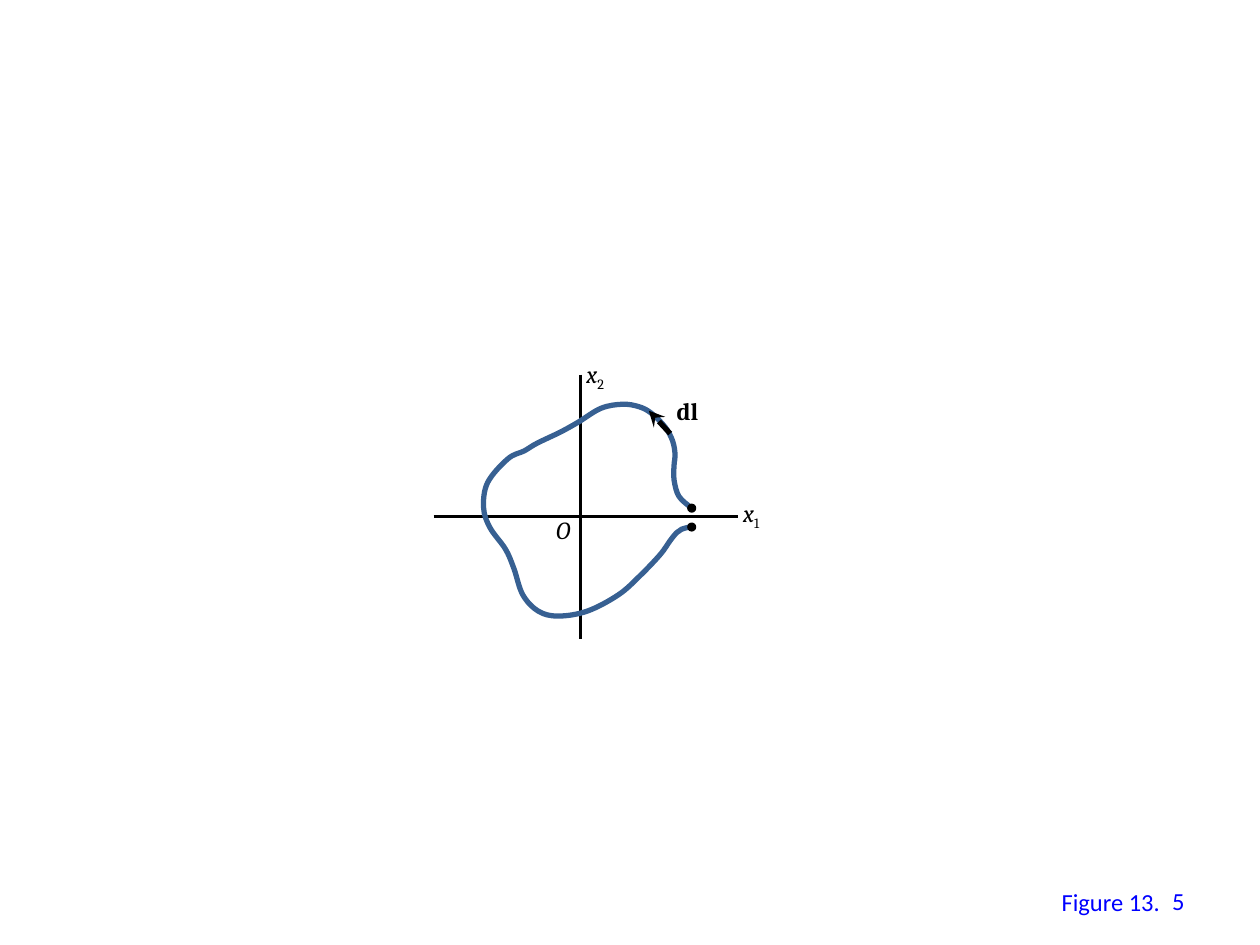
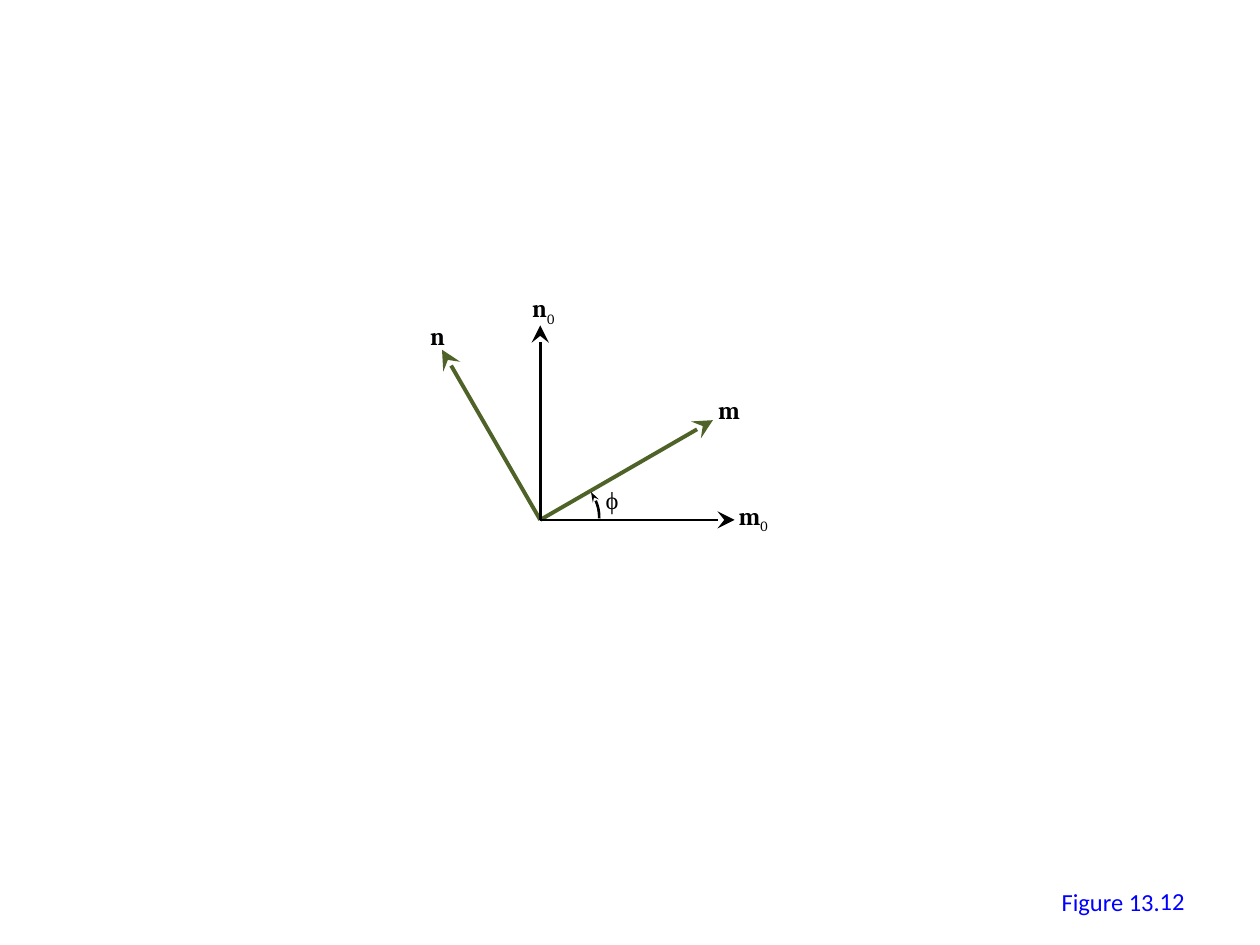
from math import cos, radians, sin

from lxml import etree
from pptx import Presentation
from pptx.dml.color import RGBColor
from pptx.enum.shapes import MSO_CONNECTOR, MSO_SHAPE
from pptx.enum.text import MSO_ANCHOR, MSO_AUTO_SIZE, PP_ALIGN
from pptx.oxml.ns import qn
from pptx.util import Cm, Pt

BLACK = RGBColor(0x00, 0x00, 0x00)
BLUE = RGBColor(0x00, 0x00, 0xFF)
STEEL = RGBColor(0x37, 0x60, 0x92)
GREEN = RGBColor(0x4F, 0x62, 0x28)


def add_label(s, left, top, width, runs, font="Cambria", color=BLACK):
    """Add a one-line text; each run is (text, style): b, i, sub or empty."""
    sp = s.shapes.add_textbox(Cm(left), Cm(top), Cm(width), Cm(0.86))
    tf = sp.text_frame
    tf.word_wrap = False
    tf.auto_size = MSO_AUTO_SIZE.SHAPE_TO_FIT_TEXT
    for text, style in runs:
        r = tf.paragraphs[0].add_run()
        r.text = text
        r.font.name = font
        r.font.size = Pt(14)
        r.font.color.rgb = color
        r.font.bold = style == "b"
        r.font.italic = style == "i"
        if style == "sub":
            r._r.get_or_add_rPr().set("baseline", "-25000")
    return sp


def add_line(s, start, end, color=BLACK, weight=1.5, arrow=None):
    """Add a straight line; arrow is the size of its arrowhead, if any."""
    ends = [Cm(v) for v in (*start, *end)]
    sp = s.shapes.add_connector(MSO_CONNECTOR.STRAIGHT, *ends)
    sp.line.color.rgb = color
    sp.line.width = Pt(weight)
    if arrow:
        etree.SubElement(sp.line._get_or_add_ln(), qn("a:tailEnd"),
                         type="stealth", w=arrow, len=arrow)
    etree.SubElement(sp._element.spPr, qn("a:effectLst"))


prs = Presentation()
prs.slide_width, prs.slide_height = Cm(25.4), Cm(19.05)
blank = prs.slide_layouts[6]

# Figure captions
slides = []
for number in ("5", "12"):
    s = prs.slides.add_slide(blank)
    add_label(s, 21.15, 17.75, 2.52, [("Figure 13.", "")], "Calibri", BLUE)
    sp = add_label(s, 18.21, 17.65, 5.92, [(number, "")], "Calibri", BLUE)
    tf = sp.text_frame
    tf.word_wrap = True
    tf.auto_size = MSO_AUTO_SIZE.NONE
    tf.vertical_anchor = MSO_ANCHOR.MIDDLE
    tf.paragraphs[0].alignment = PP_ALIGN.RIGHT
    sp.height = Cm(1.02)
    slides.append(s)

# Open contour: axes
s = slides[0]
add_line(s, (11.7, 7.55), (11.7, 12.88))
add_line(s, (8.74, 10.41), (14.88, 10.41))
for left, top, width, runs in (
    (14.73, 9.91, 1.02, [("x", "i"), ("1", "sub")]),
    (11.57, 7.11, 1.02, [("x", "i"), ("2", "sub")]),
    (13.39, 7.85, 0.94, [("dl", "b")]),
    (10.96, 10.26, 1.02, [("O", "i")]),
):
    add_label(s, left, top, width, runs)

# Open contour: outline through its knots
knots = [
    (13.94, 10.24), (13.69, 10.01), (13.59, 9.68), (13.59, 9.37),
    (13.61, 9.17), (13.56, 8.89), (13.41, 8.61), (13.13, 8.33),
    (12.88, 8.2), (12.55, 8.15), (12.12, 8.23), (11.66, 8.51),
    (11.3, 8.71), (10.82, 8.94), (10.57, 9.09), (10.24, 9.25),
    (9.83, 9.73), (9.75, 10.24), (9.88, 10.64), (10.19, 11.07),
    (10.36, 11.46), (10.54, 11.99), (10.85, 12.32), (11.25, 12.42),
    (11.84, 12.32), (12.47, 11.99), (12.9, 11.61), (13.31, 11.18),
    (13.51, 10.9), (13.64, 10.74), (13.74, 10.67), (13.92, 10.62),
]
corners = [(Cm(x), Cm(y)) for x, y in knots]
builder = s.shapes.build_freeform(*corners[0])
builder.add_line_segments(corners[1:], close=False)
sp = builder.convert_to_shape()
sp.shadow.inherit = False
sp.fill.background()
sp.line.color.rgb = STEEL
sp.line.width = Pt(3)

# Open contour: turn each segment into a smooth Bezier curve
pts = [(int(pt.get("x")), int(pt.get("y"))) for pt in sp._element.iter(qn("a:pt"))]
padded = [pts[0], *pts, pts[-1]]
segments = list(sp._element.iter(qn("a:lnTo")))
for seg, a, b, c, d in zip(segments, padded, padded[1:], padded[2:], padded[3:]):
    seg.tag = qn("a:cubicBezTo")
    control_1 = [v + (w - u) / 6 for u, v, w in zip(a, b, c)]
    control_2 = [v - (w - u) / 6 for u, v, w in zip(b, c, d)]
    for i, (x, y) in enumerate((control_1, control_2)):
        pt = etree.Element(qn("a:pt"), x=str(round(x)), y=str(round(y)))
        seg.insert(i, pt)

# Open contour: end points and line element
for top in (10.56, 10.18):
    sp = s.shapes.add_shape(MSO_SHAPE.OVAL, Cm(13.88), Cm(top), Cm(0.13), Cm(0.13))
    sp.shadow.inherit = False
    sp.fill.solid()
    sp.fill.fore_color.rgb = BLACK
    sp.line.color.rgb = BLACK
    sp.line.width = Pt(1.5)
add_line(s, (13.51, 8.74), (13.08, 8.28), weight=3, arrow="med")

# Rotated basis: vectors as angle, length, colour, weight
s = slides[1]
origin = (10.89, 10.48)
for angle, length, color, weight in (
    (30, 4.02, GREEN, 2.25),
    (120, 3.96, GREEN, 2.25),
    (0, 3.92, BLACK, 1.5),
    (90, 3.92, BLACK, 1.5),
):
    tip = (origin[0] + length * cos(radians(angle)),
           origin[1] - length * sin(radians(angle)))
    add_line(s, origin, tip, color, weight, arrow="lg")

for left, top, width, runs in (
    (14.64, 9.97, 1.12, [("m", "b"), ("0", "sub")]),
    (14.23, 7.84, 0.94, [("m", "b")]),
    (8.42, 6.35, 0.79, [("n", "b")]),
    (10.48, 5.79, 0.97, [("n", "b"), ("0", "sub")]),
):
    add_label(s, left, top, width, runs)

# Rotated basis: angle mark
sp = s.shapes.add_shape(MSO_SHAPE.ARC, Cm(10.2), Cm(9.51), Cm(1.88), Cm(1.88))
sp.shadow.inherit = False
sp.adjustments[0] = 195.33
sp.adjustments[1] = 0
sp.fill.background()
sp.line.color.rgb = BLACK
sp.line.width = Pt(1.5)
etree.SubElement(sp.line._get_or_add_ln(), qn("a:headEnd"),
                 type="stealth", w="sm", len="med")
add_label(s, 11.96, 9.65, 0.79, [("ϕ", "")], "Times New Roman")

prs.save("out.pptx")
